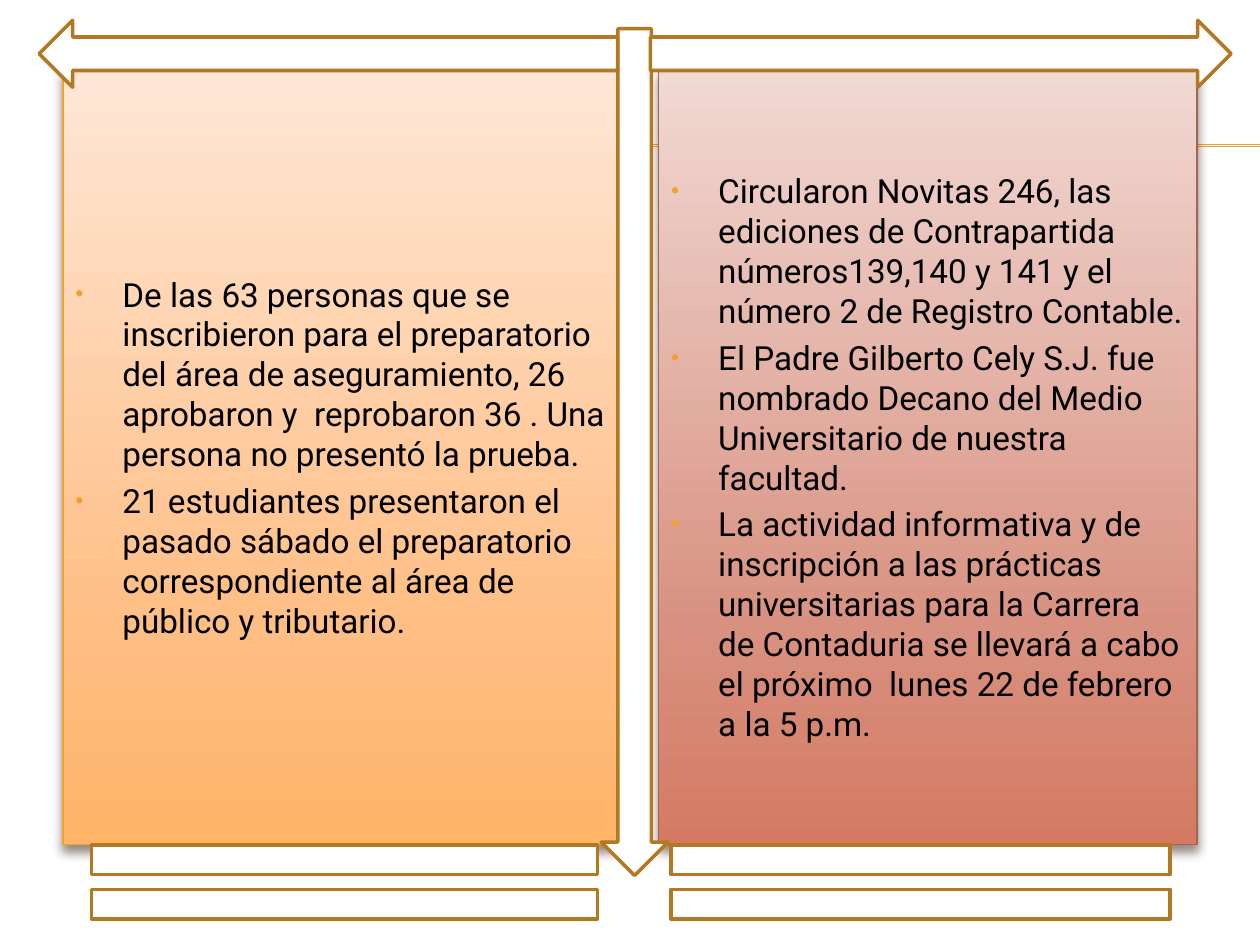
from copy import deepcopy

from pptx import Presentation
from pptx.dml.color import RGBColor
from pptx.enum.shapes import MSO_CONNECTOR, MSO_SHAPE
from pptx.enum.text import MSO_ANCHOR, PP_ALIGN
from pptx.oxml import parse_xml
from pptx.oxml.ns import nsdecls, qn
from pptx.util import Cm, Pt

STRAIGHT = MSO_CONNECTOR.STRAIGHT
RECTANGLE = MSO_SHAPE.RECTANGLE
MIDDLE = MSO_ANCHOR.MIDDLE
LEFT = PP_ALIGN.LEFT

COLORS = {
    "accent": "F0A22E",
    "outline": "B27822",
    "brick": "A5644E",
    "shadow": "4E3B30",
    "white": "FFFFFF",
    "text": "000000",
}
FONT = "Roboto"
STOP_POSITIONS = (0, 0.72, 1)
INDENT = Cm(0.95)


def rgb(name):
    return RGBColor.from_string(COLORS[name])


def add_bullet(para):
    """Give the paragraph a small accent bullet with a hanging indent."""
    properties = para._p.get_or_add_pPr()
    properties.set("marL", str(INDENT))
    properties.set("indent", str(-INDENT))
    for xml in (
        f'<a:buClr {nsdecls("a")}><a:srgbClr val="{COLORS["accent"]}"/></a:buClr>',
        f'<a:buSzPct {nsdecls("a")} val="70000"/>',
        f'<a:buFont {nsdecls("a")} typeface="Arial"/>',
        f'<a:buChar {nsdecls("a")} char="•"/>',
    ):
        properties.append(parse_xml(xml))


deck = Presentation()
deck.slide_width, deck.slide_height = Cm(25.4), Cm(19.05)
page = deck.slides.add_slide(deck.slide_layouts[6])

# Double rule behind the panels
for top in (2.92, 2.95):
    rule = page.shapes.add_connector(STRAIGHT, Cm(1.42), Cm(top), Cm(25.4), Cm(top))
    rule.line.color.rgb = rgb("accent")
    rule.line.width = Pt(0.75)
    rule._element.spPr.append(parse_xml(f'<a:effectLst {nsdecls("a")}/>'))

# Text panels: left, width, outline, gradient, paragraphs
panels = [
    (1.27, 11.23, "accent", ("FFE7D7", "FFBE84", "FFB468"), [
        "De las 63 personas que se inscribieron para el preparatorio del área de "
        "aseguramiento, 26 aprobaron y  reprobaron 36 . Una persona no presentó la prueba.",
        "21 estudiantes presentaron el pasado sábado el preparatorio correspondiente "
        "al área de público y tributario.",
    ]),
    (13.28, 10.85, "brick", ("F1D9D4", "D89180", "D47A62"), [
        "Circularon Novitas 246, las ediciones de Contrapartida números139,140 y 141 "
        "y el número 2 de Registro Contable.",
        "El Padre Gilberto Cely S.J. fue nombrado Decano del Medio Universitario de "
        "nuestra facultad.",
        "La actividad informativa y de inscripción a las prácticas universitarias para "
        "la Carrera de Contaduria se llevará a cabo el próximo  lunes 22 de febrero "
        "a la 5 p.m.",
    ]),
]
for left, width, outline, gradient, texts in panels:
    panel = page.shapes.add_shape(RECTANGLE, Cm(left), Cm(1.4), Cm(width), Cm(15.62))
    panel.line.color.rgb = rgb(outline)
    panel.line.width = Pt(0.79)

    panel.fill.gradient()
    panel.fill.gradient_angle = 270
    stop_list = panel._element.spPr.find(qn("a:gradFill")).find(qn("a:gsLst"))
    stop_list.append(deepcopy(stop_list[-1]))
    for stop, position, color in zip(panel.fill.gradient_stops, STOP_POSITIONS, gradient):
        stop.position = position
        stop.color.rgb = RGBColor.from_string(color)

    panel.shadow.inherit = False
    panel._element.spPr.find(qn("a:effectLst")).append(parse_xml(
        f'<a:outerShdw {nsdecls("a")} blurRad="{Pt(6)}" dist="{Pt(4)}" dir="5400000" '
        f'rotWithShape="0"><a:srgbClr val="{COLORS["shadow"]}">'
        '<a:alpha val="60000"/></a:srgbClr></a:outerShdw>'))

    frame = panel.text_frame
    frame.word_wrap = True
    frame.vertical_anchor = MIDDLE
    frame.text = "\n".join(texts)
    for index, para in enumerate(frame.paragraphs):
        para.alignment = LEFT
        if index:
            para.space_before = Pt(4)
        add_bullet(para)
        for span in para.runs:
            span.font.name = FONT
            span.font.size = Pt(19)
            span.font.color.rgb = rgb("text")

# Arrows and equal signs that frame the panels
ornaments = [
    (MSO_SHAPE.DOWN_ARROW, 12.12, 0.58, 1.35, 17.07),
    (MSO_SHAPE.RIGHT_ARROW, 13.11, 0.41, 11.71, 1.35),
    (MSO_SHAPE.LEFT_ARROW, 0.79, 0.41, 11.66, 1.35),
    (MSO_SHAPE.MATH_EQUAL, 0, 16.51, 13.89, 2.54),
    (MSO_SHAPE.MATH_EQUAL, 11.71, 16.51, 13.69, 2.54),
]
for kind, *place in ornaments:
    ornament = page.shapes.add_shape(kind, *map(Cm, place))
    ornament.shadow.inherit = False
    ornament.fill.solid()
    ornament.fill.fore_color.rgb = rgb("white")
    ornament.line.color.rgb = rgb("outline")
    ornament.line.width = Pt(2)

deck.save("out.pptx")
